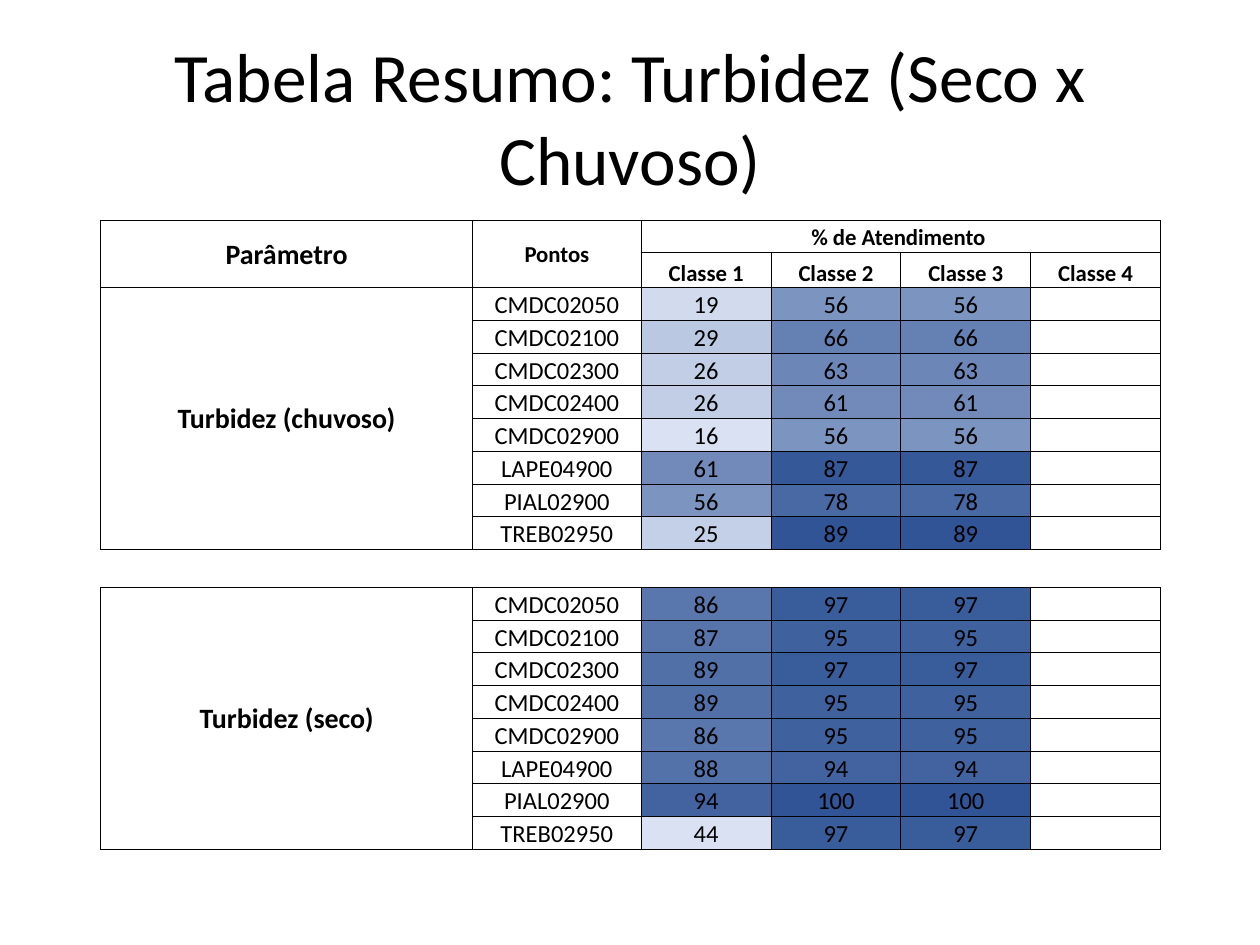
from lxml.etree import SubElement
from pptx import Presentation
from pptx.dml.color import RGBColor
from pptx.enum.text import MSO_ANCHOR, MSO_AUTO_SIZE, PP_ALIGN
from pptx.oxml import parse_xml
from pptx.oxml.ns import nsdecls, qn
from pptx.util import Inches, Pt

CLASSES = ["Classe 1", "Classe 2", "Classe 3", "Classe 4"]
POINTS = ["CMDC02050", "CMDC02100", "CMDC02300", "CMDC02400",
          "CMDC02900", "LAPE04900", "PIAL02900", "TREB02950"]
# Attendance in percent for classes 1 to 3, one row per point
SEASONS = {
    "Turbidez (chuvoso)": [(19, 56, 56), (29, 66, 66), (26, 63, 63), (26, 61, 61),
                           (16, 56, 56), (61, 87, 87), (56, 78, 78), (25, 89, 89)],
    "Turbidez (seco)": [(86, 97, 97), (87, 95, 95), (89, 97, 97), (89, 95, 95),
                        (86, 95, 95), (88, 94, 94), (94, 100, 100), (44, 97, 97)],
}
HEADER_ROWS = 2
GAP_ROW = HEADER_ROWS + len(POINTS)
COLUMN_WIDTHS = [2.95, 1.34] + [1.03] * len(CLASSES)
ROW_HEIGHTS = [0.25] * HEADER_ROWS + [0.26] * len(POINTS) + [0.3] + [0.26] * len(POINTS)
SCALE_LOW, SCALE_HIGH = "D9E1F2", "305496"


def color(value):
    return RGBColor.from_string(value)


def scale_color(value, low, high):
    """Blend the two ends of the colour scale by where value lies."""
    share = (value - low) / (high - low)
    channels = zip(color(SCALE_LOW), color(SCALE_HIGH))
    return "".join(f"{round(start + (end - start) * share):02X}" for start, end in channels)


class SlideBuilder:
    font_name = "Calibri"
    ink = "000000"

    def __init__(self, presentation):
        self.width = presentation.slide_width
        self.height = presentation.slide_height
        self.slide = presentation.slides.add_slide(presentation.slide_layouts[5])

    def box(self, left, top, width, height):
        """Turn shares of the slide's size into lengths."""
        return (int(left * self.width), int(top * self.height),
                int(width * self.width), int(height * self.height))

    def set_text(self, text_frame, text, size, bold=False):
        text_frame.text = text
        paragraph = text_frame.paragraphs[0]
        paragraph.alignment = PP_ALIGN.CENTER
        for run in paragraph.runs:
            run.font.name = self.font_name
            run.font.size = Pt(size)
            run.font.bold = bold
            run.font.color.rgb = color(self.ink)

    def title(self, text, box):
        shape = self.slide.shapes.title
        shape.left, shape.top, shape.width, shape.height = self.box(*box)
        self.set_text(shape.text_frame, text, 39.6)
        shape.text_frame.auto_size = MSO_AUTO_SIZE.NONE
        shape.text_frame.vertical_anchor = MSO_ANCHOR.MIDDLE

    def table(self, box, widths, heights):
        frame = self.slide.shapes.add_table(len(heights), len(widths), *self.box(*box))
        table = frame.table
        table.first_row = table.horz_banding = False
        for column, width in zip(table.columns, widths):
            column.width = Inches(width)
        for row, height in zip(table.rows, heights):
            row.height = Inches(height)
        for cell in table.iter_cells():
            cell.margin_left = cell.margin_right = cell.margin_top = Inches(0.01)
            cell.margin_bottom = 0
            cell.fill.background()
            # Keep empty cells from stretching their row
            paragraph = cell.text_frame.paragraphs[0]
            SubElement(paragraph._p, qn("a:endParaRPr"), sz="1400")
        return table

    def cell(self, cell, text, size=14, bold=False, fill=None, anchor=MSO_ANCHOR.BOTTOM):
        self.set_text(cell.text_frame, text, size, bold)
        cell.vertical_anchor = anchor
        if fill:
            cell.fill.solid()
            cell.fill.fore_color.rgb = color(fill)

    def borders(self, cell, visible):
        properties = cell._tc.get_or_add_tcPr()
        for position, side in enumerate("LRTB"):
            paint = (f'<a:solidFill><a:srgbClr val="{self.ink}"/></a:solidFill>'
                     if side in visible else "<a:noFill/>")
            properties.insert(position, parse_xml(
                f'<a:ln{side} {nsdecls("a")} w="{Pt(0.5)}">{paint}</a:ln{side}>'))


def fill_header(builder, table):
    for column, text, size in ((0, "Parâmetro", 16), (1, "Pontos", 13)):
        table.cell(0, column).merge(table.cell(1, column))
        builder.cell(table.cell(0, column), text, size, True, anchor=MSO_ANCHOR.MIDDLE)
    table.cell(0, 2).merge(table.cell(0, len(COLUMN_WIDTHS) - 1))
    builder.cell(table.cell(0, 2), "% de Atendimento ", 13, True)
    for column, text in enumerate(CLASSES, 2):
        builder.cell(table.cell(1, column), text, 13, True)


def fill_season(builder, table, first_row, name, rows):
    table.cell(first_row, 0).merge(table.cell(first_row + len(rows) - 1, 0))
    builder.cell(table.cell(first_row, 0), name, 16, True, anchor=MSO_ANCHOR.MIDDLE)
    values = [value for row in rows for value in row]
    low, high = min(values), max(values)
    for row, (point, shares) in enumerate(zip(POINTS, rows), first_row):
        builder.cell(table.cell(row, 1), point)
        for column, value in enumerate(shares, 2):
            builder.cell(table.cell(row, column), str(value),
                         fill=scale_color(value, low, high))


def main():
    presentation = Presentation()
    presentation.slide_width, presentation.slide_height = Inches(10), Inches(7.5)
    builder = SlideBuilder(presentation)

    # Title
    builder.title("Tabela Resumo: Turbidez (Seco x Chuvoso)", (0.05, 0.04, 0.9, 1 / 6))

    # Summary table: header, then one block per season with a gap between
    table = builder.table((0.08, 1.75 / 7.5, 0.84, 0.66), COLUMN_WIDTHS, ROW_HEIGHTS)
    fill_header(builder, table)
    for first_row, (name, rows) in zip((HEADER_ROWS, GAP_ROW + 1), SEASONS.items()):
        fill_season(builder, table, first_row, name, rows)

    # Cell borders: the gap row is open at its sides
    for row in range(len(ROW_HEIGHTS)):
        for column in range(len(COLUMN_WIDTHS)):
            builder.borders(table.cell(row, column), "TB" if row == GAP_ROW else "LRTB")

    presentation.save("out.pptx")


if __name__ == "__main__":
    main()
